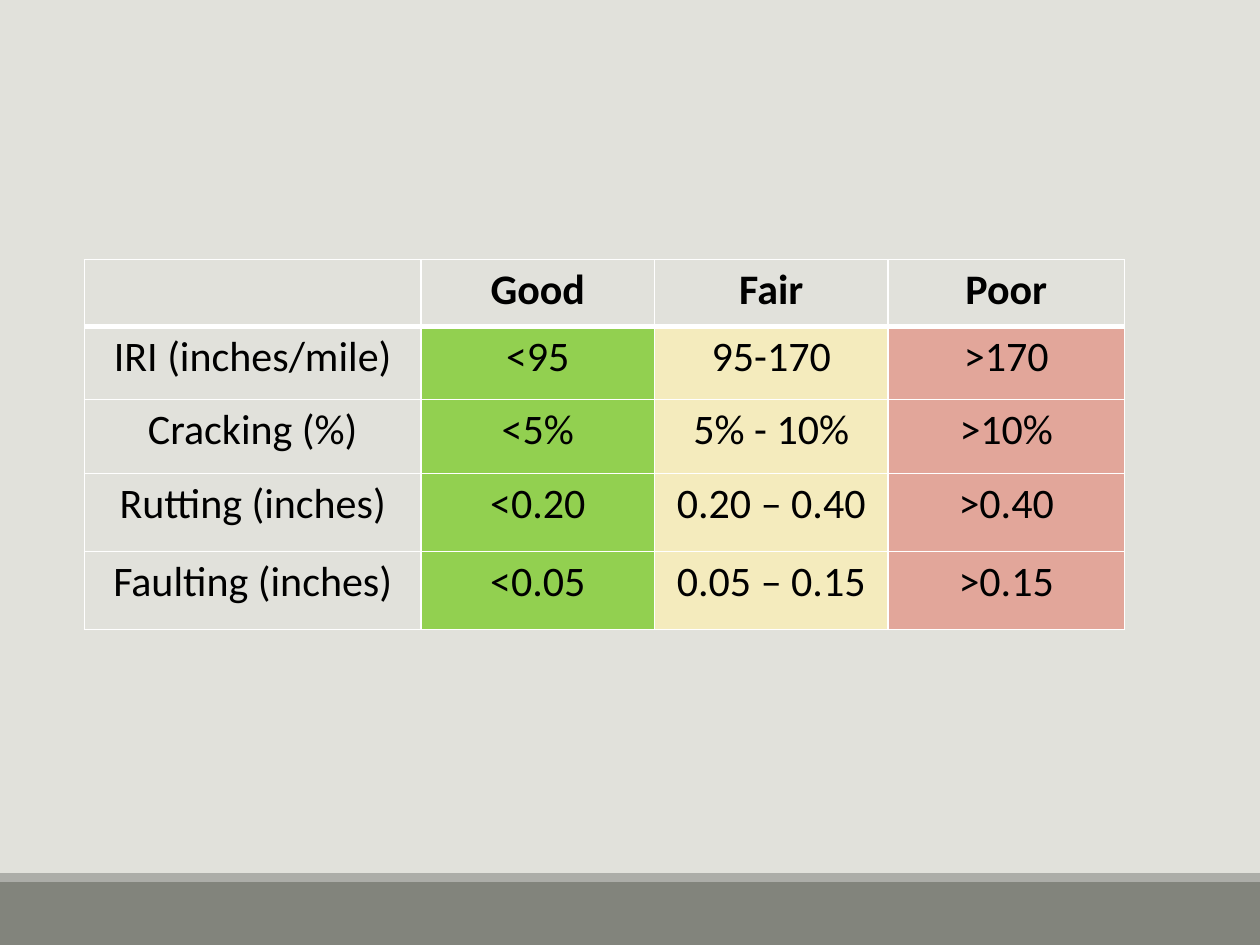
from dataclasses import dataclass

from lxml import etree
from pptx import Presentation
from pptx.dml.color import RGBColor
from pptx.enum.shapes import MSO_SHAPE
from pptx.enum.text import PP_ALIGN
from pptx.oxml.ns import qn
from pptx.util import Pt

RECT = MSO_SHAPE.RECTANGLE
CENTER = PP_ALIGN.CENTER


@dataclass(frozen=True)
class Theme:
    back: str = "E1E1DB"
    ink: str = "000000"
    rule: str = "FFFFFF"
    font: str = "Calibri"
    size: float = 24
    thin: float = 1
    thick: float = 3


@dataclass(frozen=True)
class Band:
    top: float
    height: float
    color: str


@dataclass(frozen=True)
class Column:
    width: float
    fill: str | None
    texts: tuple[str, ...]


THEME = Theme()
WIDTH, HEIGHT = 720, 540
LEFT, TOP = 48.25, 148.3
ROWS = (38.3, 41.7, 42.3, 44.6, 44.6)

BANDS = (
    Band(504, 36, "82847C"),
    Band(499, 5, "ACADA8"),
)

# One entry per table column: header first, then the ratings
COLUMNS = (
    Column(192.4, None, ("", "IRI (inches/mile)", "Cracking (%)",
                         "Rutting (inches)", "Faulting (inches)")),
    Column(133.4, "92D050", ("Good", "<95", "<5%", "<0.20", "<0.05")),
    Column(133.4, "F4EBBD", ("Fair", "95-170", "5% - 10%",
                             "0.20 – 0.40", "0.05 – 0.15")),
    Column(135.2, "E2A69A", ("Poor", ">170", ">10%", ">0.40", ">0.15")),
)


def rgb(color: str) -> RGBColor:
    return RGBColor.from_string(color)


def draw_band(slide, band: Band) -> None:
    shape = slide.shapes.add_shape(
        RECT, 0, Pt(band.top), Pt(WIDTH), Pt(band.height))
    shape.shadow.inherit = False
    shape.fill.solid()
    shape.fill.fore_color.rgb = rgb(band.color)
    shape.line.fill.background()


def set_edges(cell, row: int) -> None:
    """Draw the four cell borders, with a thick rule below the header."""
    heavy = {"lnB"} if row == 0 else {"lnT"} if row == 1 else set()
    props = cell._tc.get_or_add_tcPr()
    for spot, side in enumerate(("lnL", "lnR", "lnT", "lnB")):
        weight = THEME.thick if side in heavy else THEME.thin
        line = etree.Element(qn(f"a:{side}"), w=str(Pt(weight)))
        fill = etree.SubElement(line, qn("a:solidFill"))
        etree.SubElement(fill, qn("a:srgbClr"), val=THEME.rule)
        props.insert(spot, line)


def draw_cell(cell, row: int, text: str, color: str | None) -> None:
    cell.margin_left = cell.margin_right = Pt(5)
    cell.margin_top = cell.margin_bottom = Pt(3)
    if color and row > 0:
        cell.fill.solid()
        cell.fill.fore_color.rgb = rgb(color)
    else:
        cell.fill.background()
    set_edges(cell, row)
    if not text:
        return
    para = cell.text_frame.paragraphs[0]
    para.text = text
    para.alignment = CENTER
    font = para.runs[0].font
    font.name = THEME.font
    font.size = Pt(THEME.size)
    font.bold = row == 0
    font.color.rgb = rgb(THEME.ink)


def draw_table(slide) -> None:
    width = sum(column.width for column in COLUMNS)
    table = slide.shapes.add_table(
        len(ROWS), len(COLUMNS),
        Pt(LEFT), Pt(TOP), Pt(width), Pt(sum(ROWS))).table
    table.horz_banding = False
    for row, height in enumerate(ROWS):
        table.rows[row].height = Pt(height)
    for col, column in enumerate(COLUMNS):
        table.columns[col].width = Pt(column.width)
        for row, text in enumerate(column.texts):
            draw_cell(table.cell(row, col), row, text, column.fill)


def main() -> None:
    deck = Presentation()
    deck.slide_width, deck.slide_height = Pt(WIDTH), Pt(HEIGHT)
    slide = deck.slides.add_slide(deck.slide_layouts[6])

    # Background and footer bands
    slide.background.fill.solid()
    slide.background.fill.fore_color.rgb = rgb(THEME.back)
    for band in BANDS:
        draw_band(slide, band)

    # Pavement condition ratings
    draw_table(slide)
    deck.save("out.pptx")


if __name__ == "__main__":
    main()
